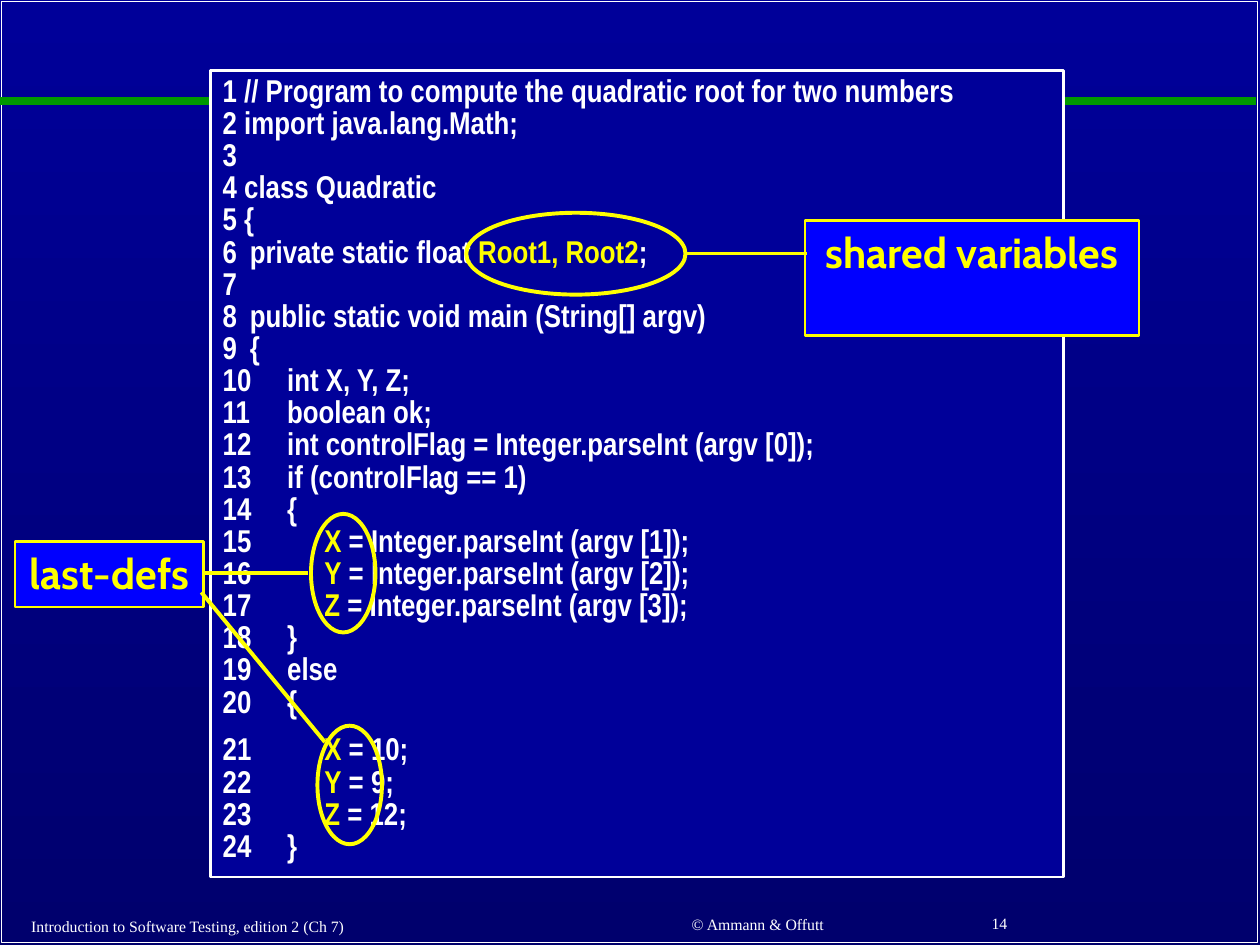
from lxml import etree
from pptx import Presentation
from pptx.dml.color import RGBColor
from pptx.enum.shapes import MSO_CONNECTOR, MSO_SHAPE
from pptx.enum.text import MSO_ANCHOR, PP_ALIGN
from pptx.oxml.ns import qn
from pptx.util import Cm, Pt

RECTANGLE, OVAL = MSO_SHAPE.RECTANGLE, MSO_SHAPE.OVAL
STRAIGHT = MSO_CONNECTOR.STRAIGHT
LEFT, CENTER = PP_ALIGN.LEFT, PP_ALIGN.CENTER
TOP, MIDDLE = MSO_ANCHOR.TOP, MSO_ANCHOR.MIDDLE

WHITE = RGBColor(0xFF, 0xFF, 0xFF)
YELLOW = RGBColor(0xFF, 0xFF, 0x00)
GREEN = RGBColor(0x00, 0x99, 0x00)
BLUE = RGBColor(0x00, 0x00, 0xFF)
NAVY = RGBColor(0x00, 0x00, 0x99)
DARK_NAVY = RGBColor(0x00, 0x00, 0x6D)

CODE_FONT = {"name": "Arial Narrow", "size": Pt(18), "bold": True}
LABEL_FONT = {"name": "Cabin", "size": Pt(24), "bold": True}
FOOTER_FONT = {"name": "Times New Roman", "size": Pt(9)}

TAB_STOPS = [0.55, 1.3, 2.05]
MARK = "*"
CODE_BLOCKS = [
    [
        (0, "// Program to compute the quadratic root for two numbers"),
        (0, "import java.lang.Math;"),
        (0, ""),
        (0, "class Quadratic"),
        (0, "{"),
        (1, "private static float *Root1, Root2*;"),
        (0, ""),
        (1, "public static void main (String[] argv)"),
        (1, "{"),
        (1, "int X, Y, Z;"),
        (1, "boolean ok;"),
        (1, "int controlFlag = Integer.parseInt (argv [0]);"),
        (1, "if (controlFlag == 1)"),
        (1, "{"),
        (2, "*X* = Integer.parseInt (argv [1]);"),
        (2, "*Y* = Integer.parseInt (argv [2]);"),
        (2, "*Z* = Integer.parseInt (argv [3]);"),
        (1, "}"),
        (1, "else"),
        (1, "{"),
    ],
    [
        (2, "*X* = 10;"),
        (2, "*Y* = 9;"),
        (2, "*Z* = 12;"),
        (1, "}"),
    ],
]

FOOTERS = [
    (0.38, 18.34, 10.44, "Introduction to Software Testing, edition 2 (Ch 7)", LEFT),
    (11.25, 18.31, 8.05, "© Ammann & Offutt", CENTER),
    (19.74, 18.29, 5.28, "14", LEFT),
]
LABELS = [
    (0.3, 10.92, 3.81, 1.32, "last-defs"),
    (16.23, 4.45, 6.73, 2.31, "shared variables"),
]
RINGS = [(6.27, 10.36, 1.3, 2.39), (6.4, 14.63, 1.3, 2.39), (9.4, 4.29, 4.42, 1.65)]
LINKS = [(6.2, 11.56, 4.14, 11.56), (6.55, 14.96, 4.06, 11.94), (16.26, 5.11, 13.82, 5.11)]


def apply_format(target, values):
    for name, value in values.items():
        setattr(target, name, value)


def add_span(para, text, font, color):
    span = para.add_run()
    span.text = text
    apply_format(span.font, font)
    span.font.color.rgb = color


def add_outline(page, kind, place, color, width, fill=None):
    box = page.shapes.add_shape(kind, *map(Cm, place))
    box.shadow.inherit = False
    if fill is None:
        box.fill.background()
    else:
        box.fill.solid()
        box.fill.fore_color.rgb = fill
    box.line.color.rgb = color
    box.line.width = Pt(width)
    return box


def add_line(page, ends, color, width):
    line = page.shapes.add_connector(STRAIGHT, *map(Cm, ends))
    line.line.color.rgb = color
    line.line.width = Pt(width)
    etree.SubElement(line._element.spPr, qn("a:effectLst"))


def add_label(page, left, top, width, height, text):
    box = add_outline(page, RECTANGLE, (left, top, width, height), YELLOW, 1.5, BLUE)
    apply_format(box.text_frame, {"word_wrap": True, "vertical_anchor": TOP})
    para = box.text_frame.paragraphs[0]
    para.alignment = CENTER
    add_span(para, text, LABEL_FONT, YELLOW)


def add_footer(page, left, top, width, text, alignment):
    box = page.shapes.add_textbox(Cm(left), Cm(top), Cm(width), Cm(0.66))
    apply_format(box.text_frame, {"word_wrap": True, "vertical_anchor": MIDDLE})
    para = box.text_frame.paragraphs[0]
    para.alignment = alignment
    add_span(para, text, FOOTER_FONT, WHITE)


def add_tab_stops(para):
    stops = etree.SubElement(para._p.get_or_add_pPr(), qn("a:tabLst"))
    for position in TAB_STOPS:
        etree.SubElement(stops, qn("a:tab"), pos=str(int(Cm(position))), algn="l")


def add_code_line(para, number, tabs, code):
    gap = "\t" * tabs or " "
    pieces = f"{number}{gap}{code}".rstrip().split(MARK)
    for index, piece in enumerate(pieces):
        add_span(para, piece, CODE_FONT, YELLOW if index % 2 else WHITE)


def add_listing(page):
    box = add_outline(page, RECTANGLE, (4.24, 1.42, 17.2, 16.26), WHITE, 1.5, NAVY)
    frame = box.text_frame
    apply_format(frame, {"word_wrap": True, "vertical_anchor": TOP})
    number = 0
    for block_index, block in enumerate(CODE_BLOCKS):
        para = frame.add_paragraph() if block_index else frame.paragraphs[0]
        apply_format(para, {
            "alignment": LEFT,
            "line_spacing": 0.85,
            "space_before": Pt(9 if block_index else 0),
        })
        add_tab_stops(para)
        for line_index, (tabs, code) in enumerate(block):
            if line_index:
                para.add_line_break()
            number += 1
            add_code_line(para, number, tabs, code)


def paint_background(page):
    fill = page.background.fill
    fill.gradient()
    fill.gradient_angle = 270
    for stop, position, color in zip(fill.gradient_stops, (0, 1), (NAVY, DARK_NAVY)):
        stop.position = position
        stop.color.rgb = color


def main():
    deck = Presentation()
    apply_format(deck, {"slide_width": Cm(25.4), "slide_height": Cm(19.05)})
    page = deck.slides.add_slide(deck.slide_layouts[6])
    paint_background(page)
    add_outline(page, RECTANGLE, (0.03, 0.03, 25.32, 18.97), WHITE, 1)
    add_line(page, (0, 2.03, 25.32, 2.03), GREEN, 4.5)
    for footer in FOOTERS:
        add_footer(page, *footer)
    add_listing(page)
    for label in LABELS:
        add_label(page, *label)
    for ring in RINGS:
        add_outline(page, OVAL, ring, YELLOW, 2.25)
    for link in LINKS:
        add_line(page, link, YELLOW, 2.25)
    deck.save("out.pptx")


if __name__ == "__main__":
    main()
